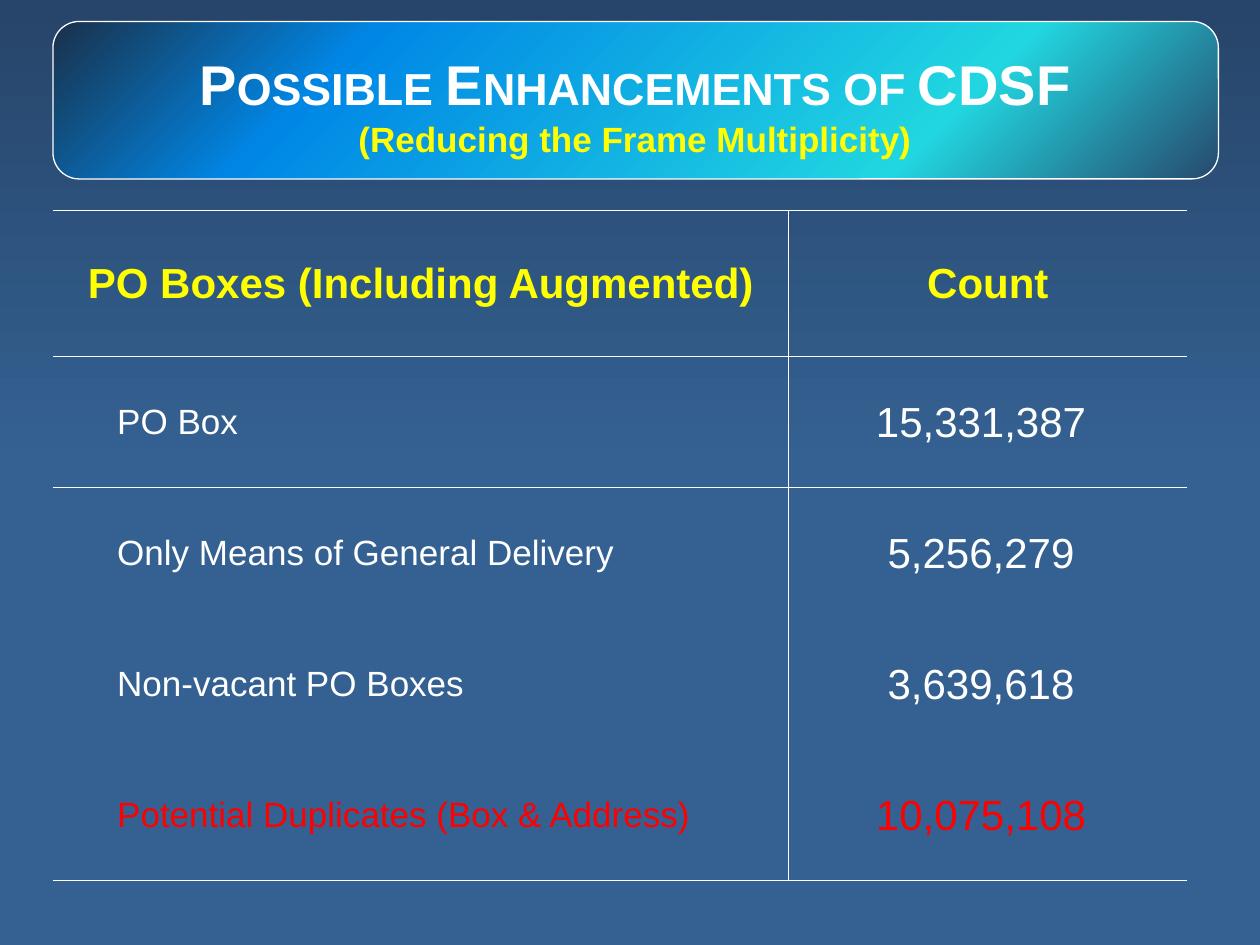
from lxml.etree import SubElement
from pptx import Presentation
from pptx.dml.color import RGBColor
from pptx.enum.shapes import MSO_SHAPE
from pptx.enum.text import MSO_ANCHOR, MSO_AUTO_SIZE, PP_ALIGN
from pptx.oxml.ns import qn
from pptx.util import Inches, Pt

WHITE = RGBColor(0xFF, 0xFF, 0xFF)
YELLOW = RGBColor(0xFF, 0xFF, 0x00)
RED = RGBColor(0xFF, 0x00, 0x00)
DEEP_BLUE = RGBColor(0x27, 0x45, 0x6A)
STEEL_BLUE = RGBColor(0x34, 0x61, 0x92)
BANNER_STOPS = [
    (0, RGBColor(0x27, 0x49, 0x6D)),
    (25, RGBColor(0x21, 0xD6, 0xE0)),
    (75, RGBColor(0x00, 0x87, 0xE6)),
    (100, RGBColor(0x1A, 0x30, 0x49)),
]
NO_GRID_STYLE = "{2D5ABB26-0587-4C30-8999-92F81FD0307C}"

COUNTS = [
    ("PO Box", "15,331,387", WHITE),
    ("Only Means of General Delivery", "5,256,279 ", WHITE),
    ("Non-vacant PO Boxes", "3,639,618 ", WHITE),
    ("Potential Duplicates (Box & Address)", "10,075,108", RED),
]


class CountSlide:
    font = "Arial"

    def __init__(self, deck):
        self.slide = deck.slides.add_slide(deck.slide_layouts[5])

    def background(self, top, bottom):
        fill = self.slide.background.fill
        fill.gradient()
        fill.gradient_angle = 270
        for stop, (position, color) in zip(fill.gradient_stops, [(0, top), (0.5, bottom)]):
            stop.position = position
            stop.color.rgb = color

    def text_run(self, paragraph, text, size, color, bold=False):
        run = paragraph.add_run()
        run.text = text
        formats = {"name": self.font, "size": Pt(size), "bold": bold}
        for key, value in formats.items():
            setattr(run.font, key, value)
        run.font.color.rgb = color
        return run

    def banner(self, left, top, width, height, stops):
        panel = self.slide.shapes.add_shape(
            MSO_SHAPE.ROUNDED_RECTANGLE,
            Inches(left), Inches(top), Inches(width), Inches(height))
        panel.shadow.inherit = False
        panel.line.color.rgb = WHITE
        panel.line.width = Pt(0.75)
        panel.fill.gradient()
        gradient = panel._element.spPr.find(qn("a:gradFill"))
        for child in list(gradient):
            gradient.remove(child)
        stop_list = SubElement(gradient, qn("a:gsLst"))
        for position, color in stops:
            stop = SubElement(stop_list, qn("a:gs"), pos=str(position * 1000))
            SubElement(stop, qn("a:srgbClr"), val=str(color))
        circle = SubElement(gradient, qn("a:path"), path="circle")
        SubElement(circle, qn("a:fillToRect"), l="100000", t="100000")
        self.slide.shapes._spTree.insert(2, panel._element)

    def title(self, left, top, width, height, heading, subtitle):
        title = self.slide.shapes.title
        place = {"left": left, "top": top, "width": width, "height": height}
        for key, value in place.items():
            setattr(title, key, Inches(value))
        frame = title.text_frame
        formats = {"word_wrap": True, "auto_size": MSO_AUTO_SIZE.NONE,
                   "vertical_anchor": MSO_ANCHOR.MIDDLE}
        for key, value in formats.items():
            setattr(frame, key, value)
        paragraph = frame.paragraphs[0]
        paragraph.alignment = PP_ALIGN.CENTER
        heading_run = self.text_run(paragraph, heading, 32, WHITE, True)
        heading_run.font._element.set("cap", "small")
        paragraph.add_line_break()
        self.text_run(paragraph, subtitle, 20, YELLOW, True)

    def table(self, left, top, columns, rows):
        frame = self.slide.shapes.add_table(
            len(rows), len(columns), Inches(left), Inches(top),
            Inches(sum(columns)), Inches(sum(rows)))
        table = frame.table
        table.first_row = table.horz_banding = False
        frame._element.find(".//" + qn("a:tableStyleId")).text = NO_GRID_STYLE
        for column, width in zip(table.columns, columns):
            column.width = Inches(width)
        for row, height in zip(table.rows, rows):
            row.height = Inches(height)
        return table

    def cell(self, cell, text, size, color, sides, align=PP_ALIGN.LEFT,
             bold=False, indent=0, margin_right=0.01):
        formats = {"vertical_anchor": MSO_ANCHOR.MIDDLE,
                   "margin_left": Inches(0.01), "margin_top": Inches(0.01),
                   "margin_right": Inches(margin_right), "margin_bottom": 0}
        for key, value in formats.items():
            setattr(cell, key, value)
        properties = cell._tc.get_or_add_tcPr()
        for side in sides:
            border = SubElement(properties, qn(f"a:ln{side}"), w=str(Pt(1)))
            solid = SubElement(border, qn("a:solidFill"))
            SubElement(solid, qn("a:srgbClr"), val=str(WHITE))
        cell.fill.background()
        paragraph = cell.text_frame.paragraphs[0]
        paragraph.alignment = align
        if indent:
            paragraph._p.get_or_add_pPr().set("marL", str(Inches(indent)))
        self.text_run(paragraph, text, size, color, bold)


def main():
    deck = Presentation()
    deck.slide_width, deck.slide_height = Inches(10), Inches(7.5)
    page = CountSlide(deck)
    page.background(DEEP_BLUE, STEEL_BLUE)
    page.banner(0.42, 0.17, 9.25, 1.25, BANNER_STOPS)
    page.title(0.5, 0.33, 9.08, 1,
               "Possible Enhancements of CDSF", "(Reducing the Frame Multiplicity)")

    table = page.table(0.42, 1.67, [5.84, 3.16], [1.16] + [1.04] * len(COUNTS))
    headers = ["PO Boxes (Including Augmented)", "Count"]
    for column, (header, inner) in enumerate(zip(headers, "RL")):
        page.cell(table.cell(0, column), header, 24, YELLOW, [inner, "T", "B"],
                  PP_ALIGN.CENTER, bold=True)
    for row, (category, count, color) in enumerate(COUNTS, 1):
        edges = {1: ["T"], len(COUNTS): ["B"]}.get(row, [])
        page.cell(table.cell(row, 0), category, 20, color, ["R"] + edges, indent=0.5)
        page.cell(table.cell(row, 1), count, 24, color, ["L"] + edges,
                  PP_ALIGN.RIGHT, margin_right=0.8)
    deck.save("out.pptx")


if __name__ == "__main__":
    main()
